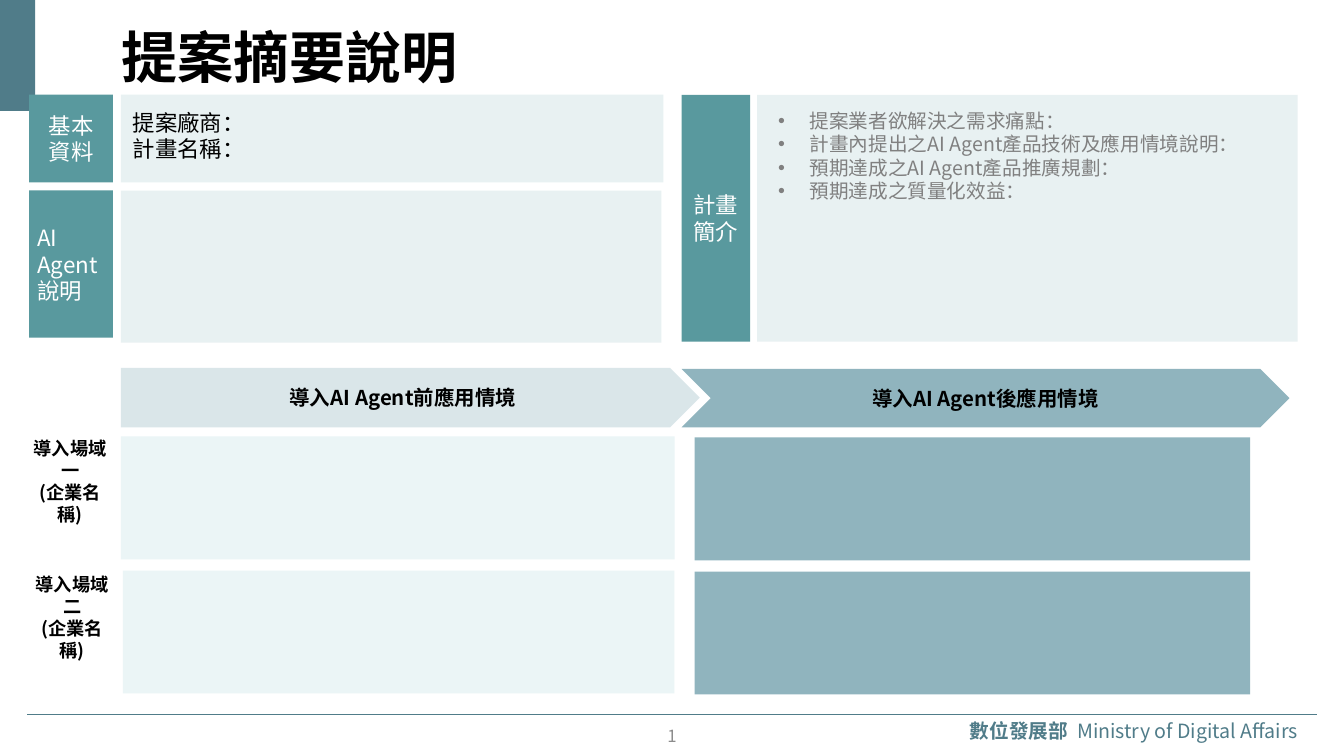
import pptx
import pptx.util
import pptx.dml.color
import pptx.enum.shapes
import pptx.enum.text
import pptx.oxml
import pptx.oxml.ns
from dataclasses import dataclass

Inches = pptx.util.Inches
Shape = pptx.enum.shapes.MSO_SHAPE
Anchor = pptx.enum.text.MSO_ANCHOR
Align = pptx.enum.text.PP_ALIGN


@dataclass(frozen=True)
class Theme:
    font: str = "Noto Sans CJK SC"
    slate: str = "507C89"
    teal: str = "59999E"
    panel: str = "E8F1F2"
    before_head: str = "DAE6E9"
    before_cell: str = "EBF5F6"
    after: str = "90B4BE"
    black: str = "000000"
    white: str = "FFFFFF"
    grey: str = "808080"
    number_grey: str = "8C8C8C"
    title_size: float = 40
    label_size: float = 16
    head_size: float = 14.6
    body_size: float = 14
    field_size: float = 13
    number_size: float = 12


theme = Theme()
rgb = pptx.dml.color.RGBColor.from_string
prs = pptx.Presentation()
prs.slide_width, prs.slide_height = Inches(13.33), Inches(7.5)
s = prs.slides.add_slide(prs.slide_layouts[6])


def add_block(at, fill, kind=Shape.RECTANGLE):
    sp = s.shapes.add_shape(kind, *map(Inches, at))
    sp.shadow.inherit = False
    sp.fill.solid()
    sp.fill.fore_color.rgb = rgb(fill)
    sp.line.fill.background()
    return sp


def write(sp, text, size, color, bold=False, align=Align.LEFT,
          anchor=Anchor.MIDDLE, inset=(0.08, 0.04)):
    """Fill a shape with text, one paragraph per line, in the theme font."""
    tf = sp.text_frame
    tf.text = text
    tf.word_wrap = True
    tf.vertical_anchor = anchor
    tf.margin_left = tf.margin_right = Inches(inset[0])
    tf.margin_top = tf.margin_bottom = Inches(inset[1])
    for p in tf.paragraphs:
        p.alignment = align
        for r in p.runs:
            r.font.name = theme.font
            r.font.size = pptx.util.Pt(size)
            r.font.bold = bold
            r.font.color.rgb = rgb(color)
            ea = pptx.oxml.parse_xml(
                f'<a:ea {pptx.oxml.ns.nsdecls("a")} typeface="{theme.font}"/>')
            r.font._element.find(pptx.oxml.ns.qn("a:latin")).addnext(ea)
    return tf


# Page frame
rule = s.shapes.add_connector(pptx.enum.shapes.MSO_CONNECTOR.STRAIGHT,
                              Inches(0.27), Inches(7.09), Inches(13.06), Inches(7.09))
rule.line.color.rgb = rgb(theme.slate)
rule.line.width = pptx.util.Pt(0.5)
rule._element.spPr.append(
    pptx.oxml.parse_xml(f'<a:effectLst {pptx.oxml.ns.nsdecls("a")}/>'))
add_block((0, 0, 0.35, 1.1), theme.slate)

# Summary panels and their labels
panels = [
    ((1.2, 0.94, 5.38, 0.87), (0.29, 0.94, 0.83, 0.87), "基本\n資料", Align.CENTER),
    ((1.2, 1.89, 5.36, 1.51), (0.29, 1.89, 0.83, 1.46), "AI Agent說明", Align.LEFT),
    ((7.51, 0.94, 5.36, 2.45), (6.76, 0.94, 0.68, 2.45), "計畫簡介", Align.CENTER),
]
for panel_at, label_at, label, align in panels:
    add_block(panel_at, theme.panel)
    write(add_block(label_at, theme.teal), label, theme.label_size, theme.white, align=align)

# Before and after headings
headings = [
    ((6.76, 3.66, 6.03, 0.58), theme.after, Shape.CHEVRON, "導入AI Agent後應用情境"),
    ((1.2, 3.65, 5.74, 0.59), theme.before_head, Shape.PENTAGON, "導入AI Agent前應用情境"),
]
for at, fill, kind, text in headings:
    write(add_block(at, fill, kind), text, theme.head_size, theme.black, True, Align.CENTER)

# One row per field site
for i, number in enumerate("一二"):
    top, shift = 4.33 + 1.33 * i, 0.02 * i
    add_block((1.2 + shift, top, 5.49 - shift, 1.22), theme.before_cell)
    add_block((6.89, top + 0.01, 5.51, 1.22), theme.after)
    field = s.shapes.add_textbox(Inches(0.2 + shift), Inches(4.29 + 1.35 * i),
                                 Inches(0.99), Inches(0.76))
    write(field, f"導入場域{number}\n(企業名稱)", theme.field_size, theme.black, True,
          Align.CENTER, Anchor.TOP, (0.1, 0.05))

# Free text
title = s.shapes.add_textbox(Inches(1.13), Inches(0.07), Inches(11.81), Inches(0.98))
write(title, "提案摘要說明", theme.title_size, theme.black, True)

proposal = s.shapes.add_textbox(Inches(1.22), Inches(1.03), Inches(4.95), Inches(0.64))
write(proposal, "提案廠商：\n計畫名稱：", theme.label_size, theme.black,
      anchor=Anchor.TOP, inset=(0.1, 0.05))

intro = s.shapes.add_textbox(Inches(7.62), Inches(1.03), Inches(4.69), Inches(1.04))
points = [
    "提案業者欲解決之需求痛點：",
    "計畫內提出之AI Agent產品技術及應用情境說明：",
    "預期達成之AI Agent產品推廣規劃：",
    "預期達成之質量化效益：",
]
tf = write(intro, "\n".join(points), theme.body_size, theme.grey,
           anchor=Anchor.TOP, inset=(0.1, 0.05))
for p in tf.paragraphs:
    pPr = p._p.get_or_add_pPr()
    pPr.set("marL", str(Inches(0.31)))
    pPr.set("indent", str(-Inches(0.31)))
    for bullet in ('buFont {} typeface="Arial"', 'buChar {} char="•"'):
        pPr.append(pptx.oxml.parse_xml(
            f'<a:{bullet.format(pptx.oxml.ns.nsdecls("a"))}/>'))

# Footer
ministry = s.shapes.add_textbox(Inches(9.54), Inches(7.09), Inches(3.52), Inches(0.32))
ministry.text_frame.text = "數位發展部 "
ministry.text_frame.paragraphs[0].add_run()
tf = write(ministry, "數位發展部 ", theme.body_size, theme.slate, True, Align.JUSTIFY)
r = tf.paragraphs[0].add_run()
r.text = " Ministry of Digital Affairs"
r.font.name = theme.font
r.font.size = pptx.util.Pt(theme.body_size)
r.font.color.rgb = rgb(theme.slate)

page = s.shapes.add_textbox(Inches(5.68), Inches(7.2), Inches(1.97), Inches(0.2))
write(page, "1", theme.number_size, theme.number_grey, align=Align.CENTER, inset=(0.08, 0))

prs.save("out.pptx")
